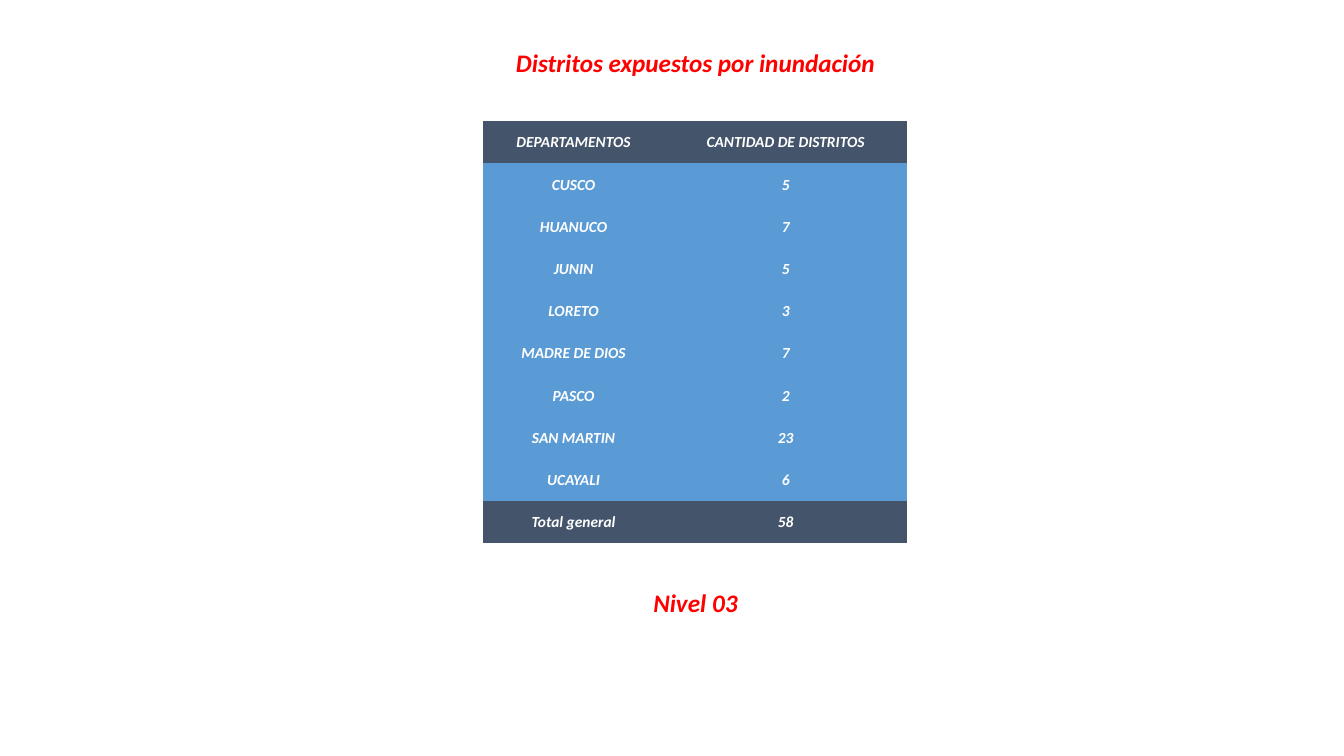
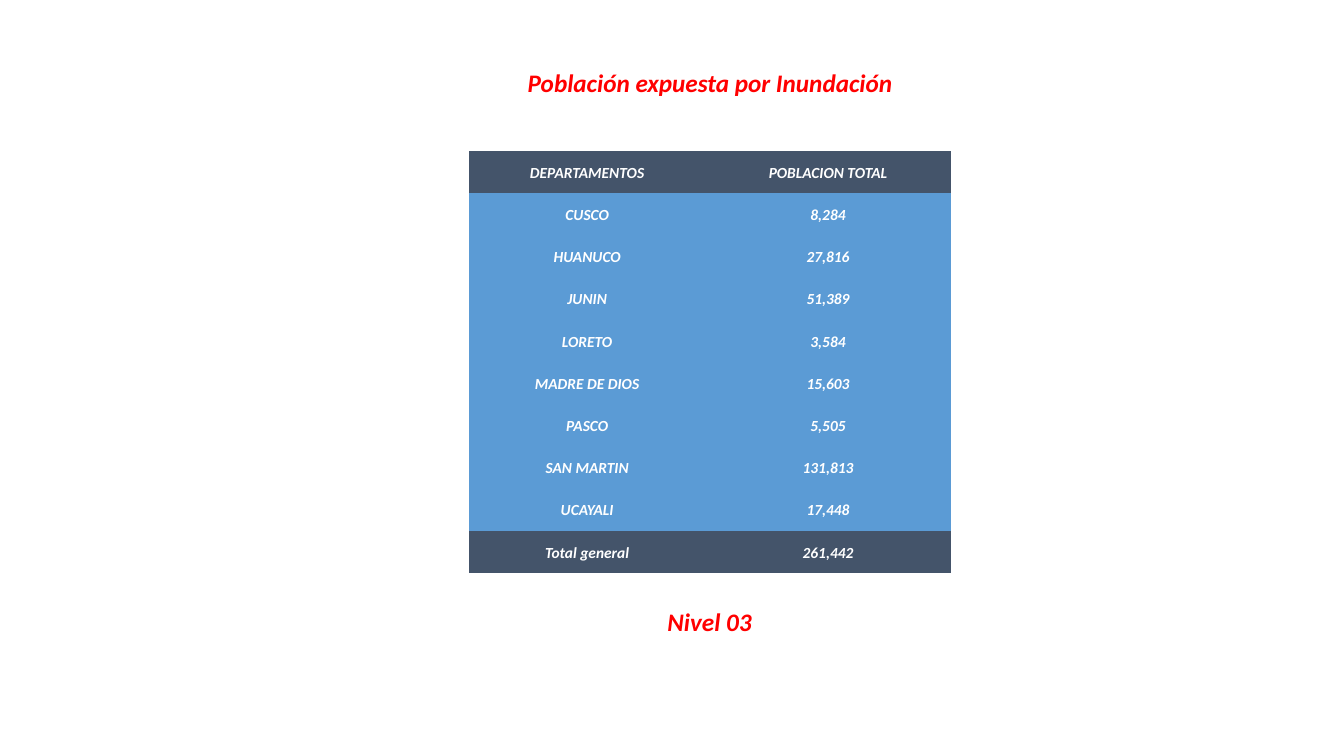
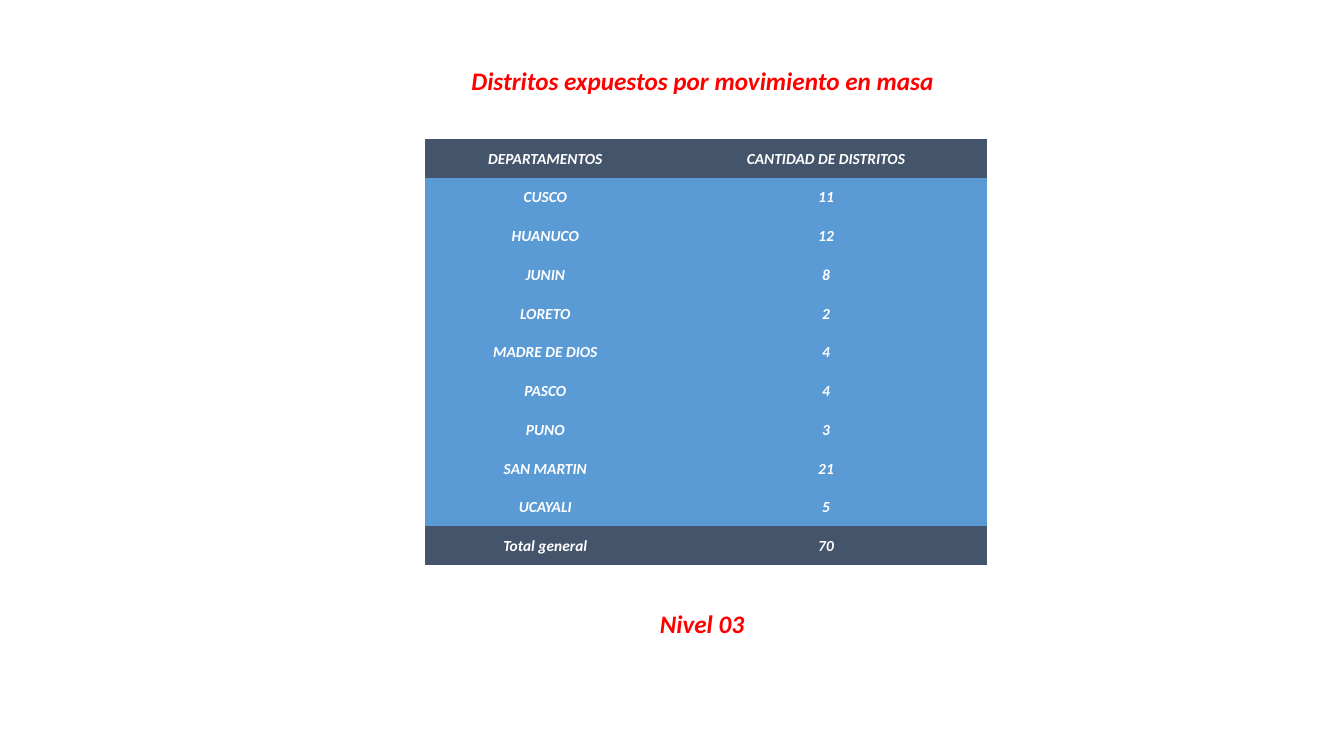
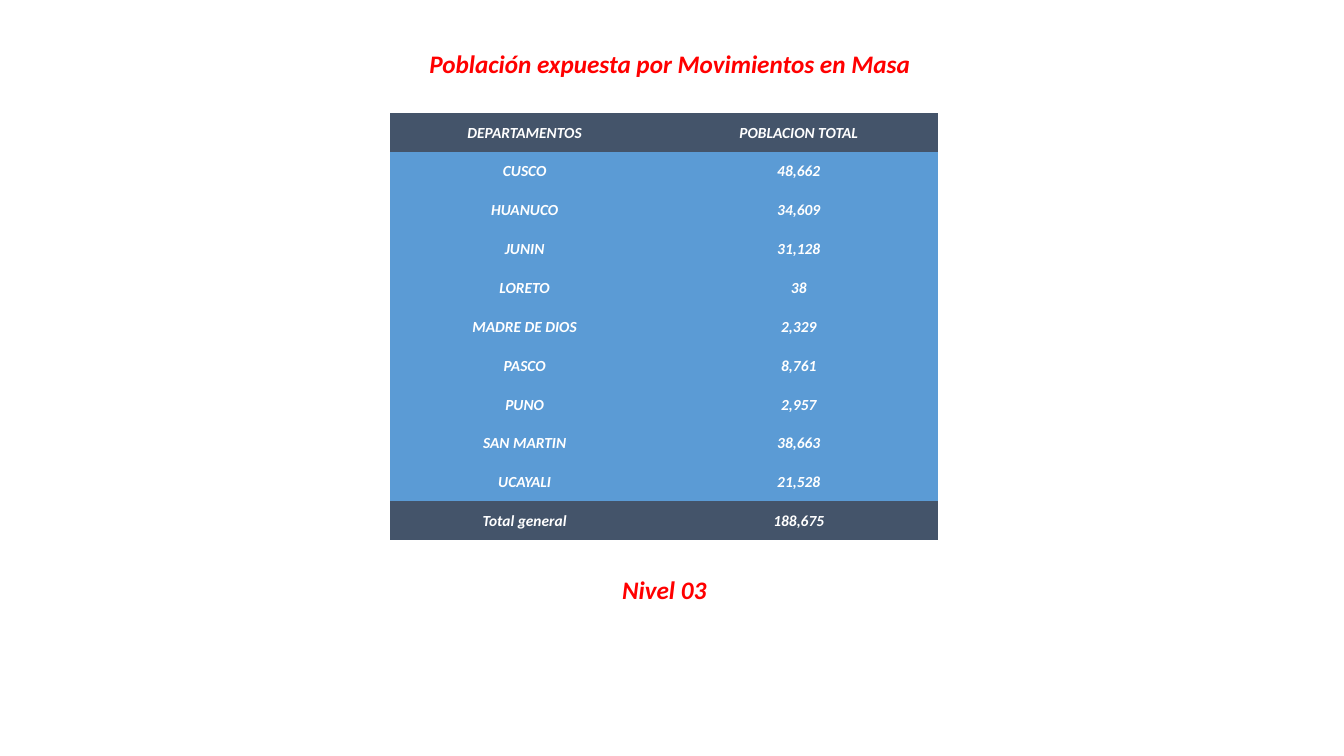
from pptx import Presentation
from pptx import util as u
from pptx.dml.color import RGBColor
from pptx.enum import text
from pptx.oxml.ns import qn

PX = 9144  # EMU per px, 100 px to the inch
RED = RGBColor(0xFF, 0x00, 0x00)
WHITE = RGBColor(0xFF, 0xFF, 0xFF)
SLATE = RGBColor(0x44, 0x54, 0x6A)
BLUE = RGBColor(0x5B, 0x9B, 0xD5)
NO_TABLE_STYLE = "{2D5ABB26-0587-4C30-8999-92F81FD0307C}"

DEPARTMENTS = ["CUSCO", "HUANUCO", "JUNIN", "LORETO", "MADRE DE DIOS",
               "PASCO", "SAN MARTIN", "UCAYALI"]
WITH_PUNO = DEPARTMENTS[:6] + ["PUNO"] + DEPARTMENTS[6:]
DISTRICTS = "CANTIDAD DE DISTRITOS"
POPULATION = "POBLACION TOTAL"


class Deck:
    """Shared style and the current slide."""

    base_font = {"name": "Calibri", "bold": True, "italic": True}
    heading_text = {"size": u.Pt(18), "color": RED}
    cell_text = {"size": u.Pt(11), "color": WHITE}
    cell_format = {"margin_left": PX, "margin_right": PX, "margin_top": PX,
                   "margin_bottom": 0, "vertical_anchor": text.MSO_ANCHOR.MIDDLE}

    def __init__(self):
        self.prs = Presentation()
        self.prs.slide_width = u.Inches(13.333)
        self.prs.slide_height = u.Inches(7.5)

    def new_slide(self):
        self.s = self.prs.slides.add_slide(self.prs.slide_layouts[5])

    def add_text(self, tf, words, size, color):
        p = tf.paragraphs[0]
        p.alignment = text.PP_ALIGN.CENTER
        r = p.add_run()
        r.text = words
        for name, value in {**self.base_font, "size": size}.items():
            setattr(r.font, name, value)
        r.font.color.rgb = color

    def heading(self, sp, words, wrap):
        frame = {"word_wrap": wrap, "vertical_anchor": text.MSO_ANCHOR.TOP,
                 "auto_size": text.MSO_AUTO_SIZE.SHAPE_TO_FIT_TEXT}
        for name, value in frame.items():
            setattr(sp.text_frame, name, value)
        self.add_text(sp.text_frame, words, **self.heading_text)

    def title(self, words, x, y, w, h=40):
        sp = self.s.shapes.title
        for name, value in {"left": x, "top": y, "width": w, "height": h}.items():
            setattr(sp, name, value * PX)
        self.heading(sp, words, wrap=False)

    def caption(self, words, x, y, w, h=40):
        sp = self.s.shapes.add_textbox(x * PX, y * PX, w * PX, h * PX)
        self.heading(sp, words, wrap=True)

    def table(self, rows, x, y, widths, h):
        frame = self.s.shapes.add_table(len(rows), len(widths), x * PX, y * PX,
                                        sum(widths) * PX, h * PX)
        for style in frame.element.iter(qn("a:tableStyleId")):
            style.text = NO_TABLE_STYLE
        table = frame.table
        table.first_row = table.horz_banding = False
        for column, width in zip(table.columns, widths):
            column.width = width * PX
        for i, row in enumerate(rows):
            table.rows[i].height = h * PX // len(rows)
            fill = SLATE if i in (0, len(rows) - 1) else BLUE
            for j, words in enumerate(row):
                self.cell(table.cell(i, j), words, fill)

    def cell(self, cell, words, fill):
        for name, value in self.cell_format.items():
            setattr(cell, name, value)
        cell.fill.solid()
        cell.fill.fore_color.rgb = fill
        self.add_text(cell.text_frame, words, **self.cell_text)


# Each slide: title and its box, table data and place, caption box
SLIDES = [
    {"title": ("Distritos expuestos por inundación", 500, 42, 380),
     "header": DISTRICTS, "names": DEPARTMENTS,
     "values": [5, 7, 5, 3, 7, 2, 23, 6],
     "table": (479, 120, (180, 241), 419), "caption": (630, 578, 120)},
    {"title": ("Población expuesta por Inundación", 512, 62, 385),
     "header": POPULATION, "names": DEPARTMENTS,
     "values": [8284, 27816, 51389, 3584, 15603, 5505, 131813, 17448],
     "table": (465, 150, (235, 243), 419), "caption": (649, 597, 110)},
    {"title": ("Distritos expuestos por movimiento en masa", 455, 60, 484),
     "header": DISTRICTS, "names": WITH_PUNO,
     "values": [11, 12, 8, 2, 4, 4, 3, 21, 5],
     "table": (422, 138, (238, 319), 423), "caption": (643, 599, 107)},
    {"title": ("Población expuesta por Movimientos en Masa", 413, 43, 503),
     "header": POPULATION, "names": WITH_PUNO,
     "values": [48662, 34609, 31128, 38, 2329, 8761, 2957, 38663, 21528],
     "table": (387, 112, (267, 277), 424), "caption": (604, 565, 110)},
]


def main():
    deck = Deck()
    for slide in SLIDES:
        deck.new_slide()
        deck.title(*slide["title"])
        deck.caption("Nivel 03", *slide["caption"])
        values = slide["values"]
        rows = [("DEPARTAMENTOS", slide["header"])]
        rows += [(name, f"{value:,}") for name, value in zip(slide["names"], values)]
        rows.append(("Total general", f"{sum(values):,}"))
        deck.table(rows, *slide["table"])
    deck.prs.save("out.pptx")


if __name__ == "__main__":
    main()
